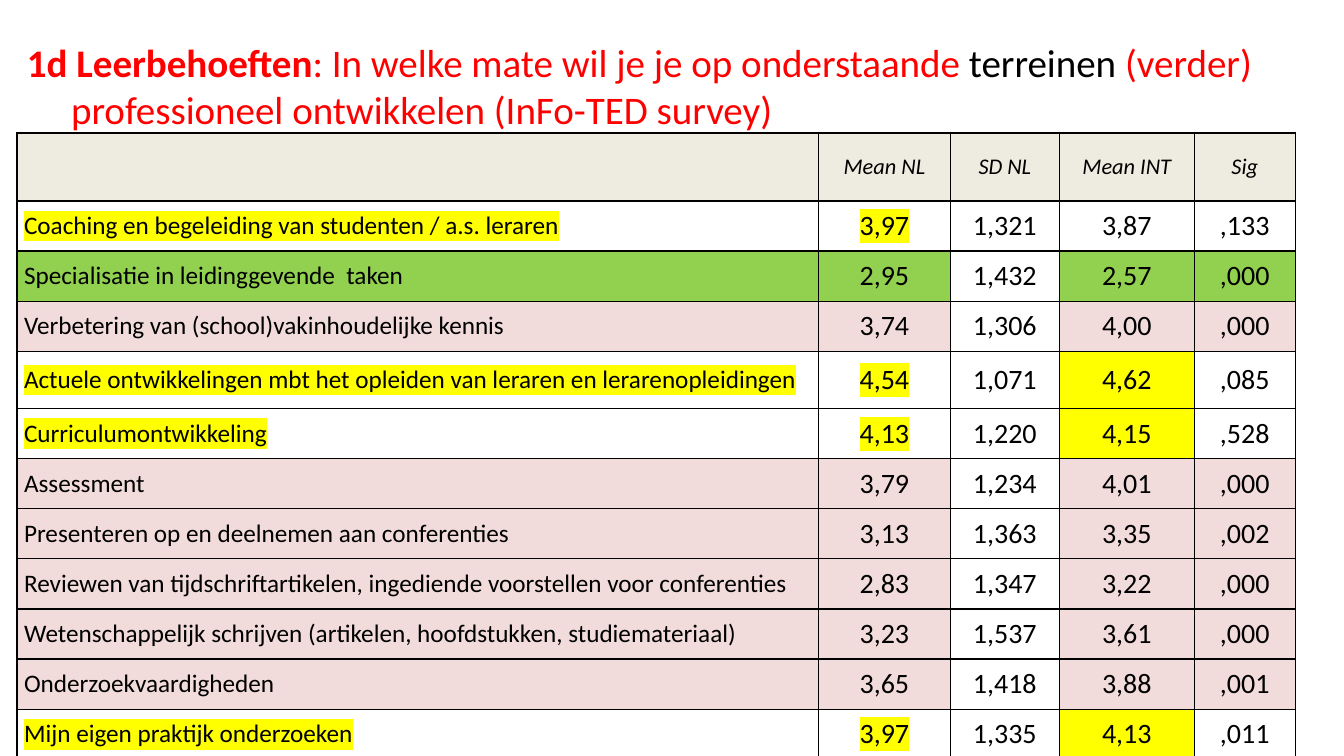
from lxml.etree import SubElement
from pptx import Presentation
from pptx.dml.color import RGBColor
from pptx.enum.text import MSO_ANCHOR as Anchor, PP_ALIGN as Align
from pptx.oxml.ns import qn
from pptx.util import Pt

COLORS = {
    "black": "000000", "red": "FF0000", "header": "EEECE1",
    "yellow": "FFFF00", "green": "92D050", "pink": "F2DCDB",
}
FONT = "Calibri"

HEADINGS = ["", "Mean NL", "SD NL", "Mean INT", "Sig"]
COLUMN_WIDTHS = [572.4, 94.3, 77.8, 96.5, 72]
HEADER_HEIGHT, ROW_HEIGHT, TALL_ROW_HEIGHT = 48.6, 35.8, 41

# Marking of a row: fill colour per column, and columns with highlighted text
FILLED = (0, 1, 3, 4)
MARKINGS = {
    "key": ({}, (0, 1)),
    "key in both": ({3: "yellow"}, (0, 1)),
    "NL higher": (dict.fromkeys(FILLED, "green"), ()),
    "NL lower": (dict.fromkeys(FILLED, "pink"), ()),
}
LEARNING_NEEDS = [
    ("key", "Coaching en begeleiding van studenten / a.s. leraren", "3,97", "1,321", "3,87", ",133"),
    ("NL higher", "Specialisatie in leidinggevende  taken", "2,95", "1,432", "2,57", ",000"),
    ("NL lower", "Verbetering van (school)vakinhoudelijke kennis", "3,74", "1,306", "4,00", ",000"),
    ("key in both", "Actuele ontwikkelingen mbt het opleiden van leraren en lerarenopleidingen",
     "4,54", "1,071", "4,62", ",085"),
    ("key in both", "Curriculumontwikkeling", "4,13", "1,220", "4,15", ",528"),
    ("NL lower", "Assessment", "3,79", "1,234", "4,01", ",000"),
    ("NL lower", "Presenteren op en deelnemen aan conferenties", "3,13", "1,363", "3,35", ",002"),
    ("NL lower", "Reviewen van tijdschriftartikelen, ingediende voorstellen voor conferenties",
     "2,83", "1,347", "3,22", ",000"),
    ("NL lower", "Wetenschappelijk schrijven (artikelen, hoofdstukken, studiemateriaal)",
     "3,23", "1,537", "3,61", ",000"),
    ("NL lower", "Onderzoekvaardigheden", "3,65", "1,418", "3,88", ",001"),
    ("key in both", "Mijn eigen praktijk onderzoeken", "3,97", "1,335", "4,13", ",011"),
]
TALL_ROW = 4


def add_text(paragraph, text, size, color="black", bold=False, italic=False, highlight=None):
    run = paragraph.add_run()
    run.text = text
    font = run.font
    font.size, font.bold, font.italic = Pt(size), bold, italic
    font.color.rgb = RGBColor.from_string(COLORS[color])
    if highlight:
        mark = SubElement(run._r.get_or_add_rPr(), qn("a:highlight"))
        SubElement(mark, qn("a:srgbClr"), val=COLORS[highlight])
    font.name = FONT


class SurveySlide:
    def __init__(self, slide):
        self.slide = slide

    def title(self, left, top, width, height, lines, size, indent):
        frame = self.slide.shapes.add_textbox(Pt(left), Pt(top), Pt(width), Pt(height)).text_frame
        frame.word_wrap = True
        frame.vertical_anchor = Anchor.MIDDLE
        frame.margin_bottom = Pt(14.4)
        heading = frame.paragraphs[0]
        properties = heading._p.get_or_add_pPr()
        properties.set("marL", str(Pt(indent)))
        properties.set("indent", str(-Pt(indent)))
        for number, line in enumerate(lines):
            if number:
                heading.add_line_break()
            for text, style in line:
                add_text(heading, text, size, **style)

    def table(self, left, top, widths, heights):
        table = self.slide.shapes.add_table(
            len(heights), len(widths), Pt(left), Pt(top), Pt(sum(widths)), Pt(sum(heights))).table
        table.first_row = table.horz_banding = False
        for column, width in zip(table.columns, widths):
            column.width = Pt(width)
        for row, height in zip(table.rows, heights):
            row.height = Pt(height)
        return table

    def cell(self, cell, text, size, fill=None, align=Align.CENTER, **style):
        cell.vertical_anchor = Anchor.MIDDLE
        cell.margin_left = cell.margin_right = Pt(5)
        cell.margin_top = cell.margin_bottom = 0
        self.borders(cell)
        if fill:
            cell.fill.solid()
            cell.fill.fore_color.rgb = RGBColor.from_string(COLORS[fill])
        else:
            cell.fill.background()
        if text:
            paragraph = cell.text_frame.paragraphs[0]
            paragraph.alignment = align
            add_text(paragraph, text, size, **style)

    def borders(self, cell):
        properties = cell._tc.get_or_add_tcPr()
        for side in ("lnL", "lnR", "lnT", "lnB"):
            line = SubElement(properties, qn(f"a:{side}"), w=str(Pt(1)))
            SubElement(SubElement(line, qn("a:solidFill")), qn("a:srgbClr"), val=COLORS["black"])


def main():
    deck = Presentation()
    deck.slide_width, deck.slide_height = Pt(960), Pt(540)
    survey = SurveySlide(deck.slides.add_slide(deck.slide_layouts[6]))

    # Question
    red = {"color": "red"}
    survey.title(12.2, 21.6, 913, 90, [
        [("1d Leerbehoeften", {"color": "red", "bold": True}),
         (": In welke mate wil je je op onderstaande ", red),
         ("terreinen ", {}),
         ("(verder)", red)],
        [("professioneel ontwikkelen (InFo-TED survey)", red)],
    ], size=27.9, indent=31.5)

    # Results table
    heights = [HEADER_HEIGHT] + [ROW_HEIGHT] * len(LEARNING_NEEDS)
    heights[TALL_ROW] = TALL_ROW_HEIGHT
    results = survey.table(12.2, 95, COLUMN_WIDTHS, heights)
    for column, heading in enumerate(HEADINGS):
        survey.cell(results.cell(0, column), heading, 16, fill="header", italic=True)
    for row, (marking, *values) in enumerate(LEARNING_NEEDS, start=1):
        fills, highlighted = MARKINGS[marking]
        for column, value in enumerate(values):
            survey.cell(
                results.cell(row, column), value,
                size=20 if column else 18,
                align=Align.CENTER if column else Align.LEFT,
                fill=fills.get(column),
                highlight="yellow" if column in highlighted else None)

    deck.save("out.pptx")


if __name__ == "__main__":
    main()
